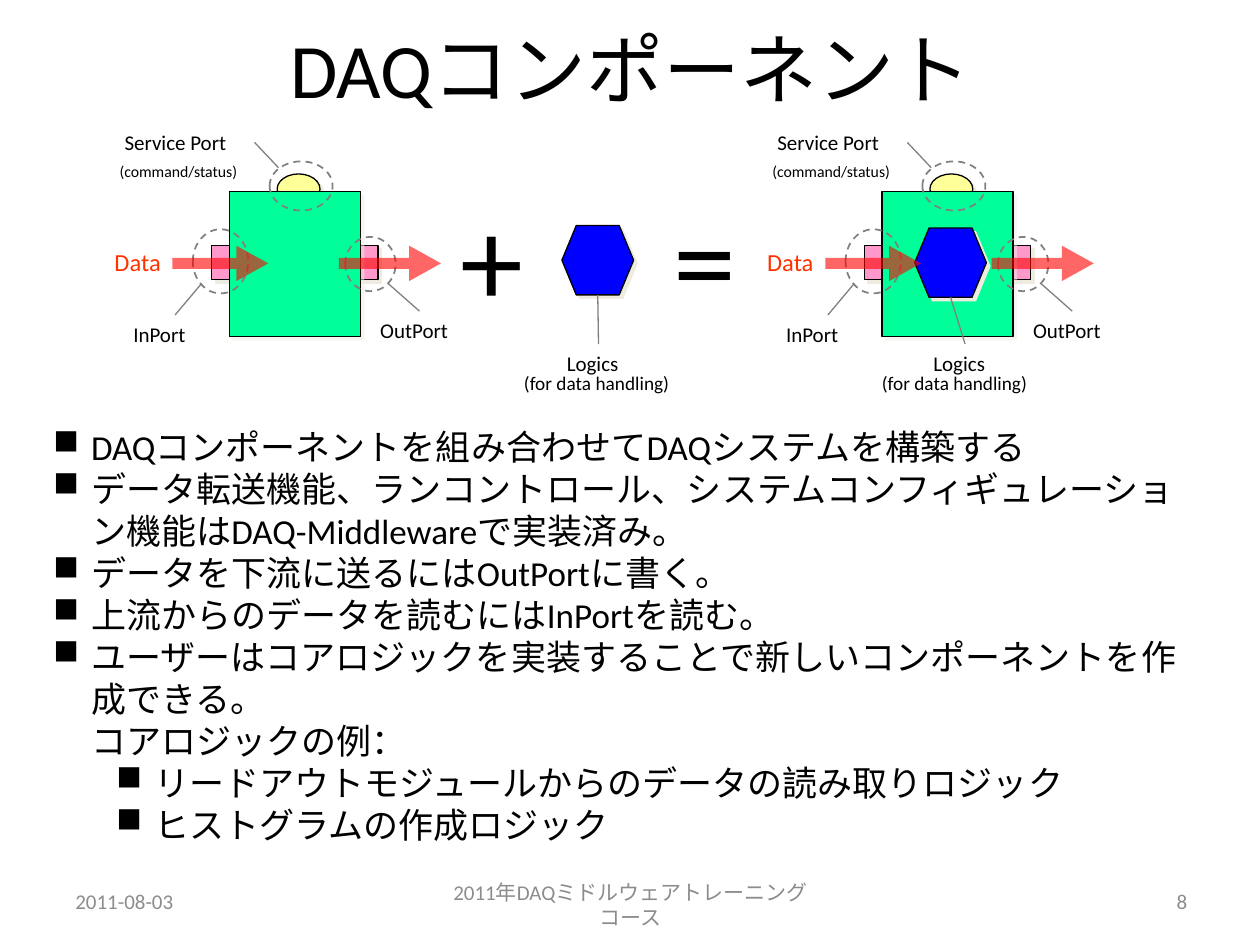
import pptx
import pptx.dml.color
import pptx.enum.dml
import pptx.enum.shapes
import pptx.enum.text
import pptx.oxml.ns
import pptx.oxml.xmlchemy
import pptx.util
from dataclasses import dataclass

Pt = pptx.util.Pt
SHAPE = pptx.enum.shapes.MSO_SHAPE
ALIGN = pptx.enum.text.PP_ALIGN
ANCHOR = pptx.enum.text.MSO_ANCHOR
TOP, BOTTOM, RIGHT = 0, 2, 3
qn = pptx.oxml.ns.qn


@dataclass(frozen=True)
class Theme:
    font: str = "Calibri"
    black: str = "000000"
    white: str = "FFFFFF"
    footer: str = "8C8C8C"
    guide: str = "808080"
    shadow: str = "EEECE1"
    port: str = "FF99CC"
    service: str = "FFFF99"
    body: str = "00FF99"
    logic: str = "0000FF"
    arrow: str = "FF0000"
    data: str = "FF3300"
    title_size: float = 44
    sign_size: float = 72
    body_size: float = 20
    data_size: float = 14
    label_size: float = 12
    caption_size: float = 11
    small_size: float = 9


class SlideBuilder:
    """Draw styled elements on the current slide, with lengths in points."""

    def __init__(self, s, theme):
        self.s = s
        self.theme = theme

    def rgb(self, color):
        return pptx.dml.color.RGBColor.from_string(color)

    def child(self, parent, tag, **attrs):
        el = pptx.oxml.xmlchemy.OxmlElement(tag)
        for key, value in attrs.items():
            el.set(key, str(value))
        parent.append(el)
        return el

    def run(self, p, text, size, color):
        r = p.add_run()
        r.text = text
        r.font.name = self.theme.font
        r.font.size = Pt(size)
        r.font.color.rgb = self.rgb(color)

    def text(self, x, y, w, h, text, size=None, color=None, align=ALIGN.LEFT,
             wrap=True, middle=False):
        sp = self.s.shapes.add_textbox(Pt(x), Pt(y), Pt(w), Pt(h))
        tf = sp.text_frame
        tf.word_wrap = wrap
        if middle:
            tf.vertical_anchor = ANCHOR.MIDDLE
        else:
            tf.auto_size = pptx.enum.text.MSO_AUTO_SIZE.SHAPE_TO_FIT_TEXT
        p = tf.paragraphs[0]
        p.alignment = align
        self.run(p, text, size or self.theme.label_size, color or self.theme.black)
        return sp

    def shape(self, kind, x, y, w, h, fill, shadow=None, outline=True):
        sp = self.s.shapes.add_shape(kind, Pt(x), Pt(y), Pt(w), Pt(h))
        sp.fill.solid()
        sp.fill.fore_color.rgb = self.rgb(fill)
        if outline:
            sp.line.color.rgb = self.rgb(self.theme.black)
            sp.line.width = Pt(0.75)
        else:
            sp.line.fill.background()
        sp.shadow.inherit = False
        if shadow:
            effects = sp._element.spPr.find(qn("a:effectLst"))
            outer = self.child(effects, "a:outerShdw", dist=Pt(2.8), dir=45 * 60000,
                               algn="ctr", rotWithShape=0)
            color = self.child(outer, "a:srgbClr", val=self.theme.shadow)
            self.child(color, "a:alpha", val=shadow * 1000)
        return sp

    def ring(self, x, y, w, h):
        sp = self.shape(SHAPE.OVAL, x, y, w, h, self.theme.white)
        sp.fill.background()
        sp.line.color.rgb = self.rgb(self.theme.guide)
        sp.line.width = Pt(1)
        sp.line.dash_style = pptx.enum.dml.MSO_LINE.DASH

    def arrow(self, x, w):
        sp = self.shape(SHAPE.RIGHT_ARROW, x, 140.4, w, 20.2, self.theme.arrow, outline=False)
        sp.adjustments[0] = 0.31
        sp.adjustments[1] = 0.9
        color = sp._element.spPr.find(qn("a:solidFill")).find(qn("a:srgbClr"))
        self.child(color, "a:alpha", val=60000)

    def link(self, label, side, x=0, y=0, target=None):
        cxn = self.s.shapes.add_connector(
            pptx.enum.shapes.MSO_CONNECTOR.STRAIGHT, Pt(x), Pt(y), Pt(x), Pt(y))
        cxn.begin_connect(label, side)
        if target is not None:
            cxn.end_connect(target, BOTTOM)
        cxn.line.color.rgb = self.rgb(self.theme.guide)
        cxn.line.width = Pt(0.75)
        self.child(cxn._element.spPr, "a:effectLst")

    def logic(self, hexagon_x, hexagon_y, label_x, caption_x):
        hexagon = self.shape(SHAPE.FLOWCHART_PREPARATION, hexagon_x, hexagon_y, 41, 39.6,
                             self.theme.logic, 100)
        label = self.text(label_x, 196.6, 50.4, 21.6, "Logics")
        self.link(label, TOP, target=hexagon)
        self.text(caption_x, 208.8, 104.4, 20.9, "(for data handling)",
                  self.theme.caption_size, wrap=False)

    def component(self, dx, logic):
        t = self.theme
        for x in (198.7, 121):
            self.shape(SHAPE.RECTANGLE, x + dx, 140.4, 17.3, 19.4, t.port, 100)
        self.shape(SHAPE.OVAL, 158.4 + dx, 99.4, 24.5, 17.3, t.service, 100)
        self.shape(SHAPE.RECTANGLE, 131 + dx, 109.4, 74.9, 82.8, t.body, 50)
        ports = (
            ("InPort", (69.1, 180, 61.9), TOP, (115.2, 162), (110.2, 131, 31.7, 36.7)),
            ("OutPort", (210.2, 177.8, 59), TOP, (221.8, 162), (197.3, 135.4, 28.8, 31)),
            ("Service Port", (64.1, 70.6, 81.4), RIGHT, (159.1, 95.8), (154.1, 92.2, 36, 28.1)),
        )
        for name, (x, y, w), side, (end_x, end_y), (ring_x, *ring) in ports:
            self.ring(ring_x + dx, *ring)
            label = self.text(x + dx, y, w, 21.6, name)
            self.link(label, side, end_x + dx, end_y)
        self.text(61.2 + dx, 88.6, 87.1, 18, "(command/status)", t.small_size, wrap=False)
        self.logic(*logic)
        self.arrow(98.6 + dx, 54.7)
        self.text(58.3 + dx, 137.5, 44.6, 24.5, "Data", t.data_size, t.data, wrap=False)
        self.arrow(193.7 + dx, 58.3)

    def bullets(self, x, y, w, h, items):
        sp = self.shape(SHAPE.RECTANGLE, x, y, w, h, self.theme.white, outline=False)
        tf = sp.text_frame
        tf.word_wrap = True
        tf.vertical_anchor = ANCHOR.TOP
        tf.margin_top = Pt(51.6)
        for i, (level, marked, text) in enumerate(items):
            p = tf.paragraphs[0] if i == 0 else tf.add_paragraph()
            p.alignment = ALIGN.LEFT
            p.level = level
            pPr = p._p.get_or_add_pPr()
            pPr.set("marL", str(Pt(28.35 + 36 * level)))
            pPr.set("indent", str(Pt(-21.6 if marked else 0)))
            if marked:
                self.child(pPr, "a:buChar", char="■")
            else:
                self.child(pPr, "a:buNone")
            self.run(p, text, self.theme.body_size, self.theme.black)


def main():
    prs = pptx.Presentation()
    prs.slide_width, prs.slide_height = Pt(720), Pt(540)
    theme = Theme()
    s = SlideBuilder(prs.slides.add_slide(prs.slide_layouts[6]), theme)

    s.text(36.7, 0, 648, 77.8, "DAQコンポーネント", theme.title_size,
           align=ALIGN.CENTER, middle=True)
    s.bullets(16.6, 191.5, 673.9, 270.7, (
        (0, True, "DAQコンポーネントを組み合わせてDAQシステムを構築する"),
        (0, True, "データ転送機能、ランコントロール、システムコンフィギュレーション機能は"
                  "DAQ-Middlewareで実装済み。"),
        (0, True, "データを下流に送るにはOutPortに書く。"),
        (0, True, "上流からのデータを読むにはInPortを読む。"),
        (0, True, "ユーザーはコアロジックを実装することで新しいコンポーネントを作成できる。"),
        (0, False, "コアロジックの例："),
        (1, True, "リードアウトモジュールからのデータの読み取りロジック"),
        (1, True, "ヒストグラムの作成ロジック"),
    ))
    s.component(0, (321.1, 128.9, 316.8, 292.3))
    s.component(373, (522.7, 130.3, 526.3, 496.8))
    for x, sign in ((256.3, "+"), (378, "=")):
        s.text(x, 99.4, 51.1, 94.3, sign, theme.sign_size, wrap=False)
    footers = (
        (36, 500.4, 167.8, "2011-08-03", ALIGN.LEFT),
        (246.2, 502.6, 228.2, "2011年DAQミドルウェアトレーニングコース", ALIGN.CENTER),
        (517.7, 500.4, 167.8, "8", ALIGN.RIGHT),
    )
    for x, y, w, text, align in footers:
        s.text(x, y, w, 28.8, text, color=theme.footer, align=align, middle=True)
    prs.save("out.pptx")


if __name__ == "__main__":
    main()
